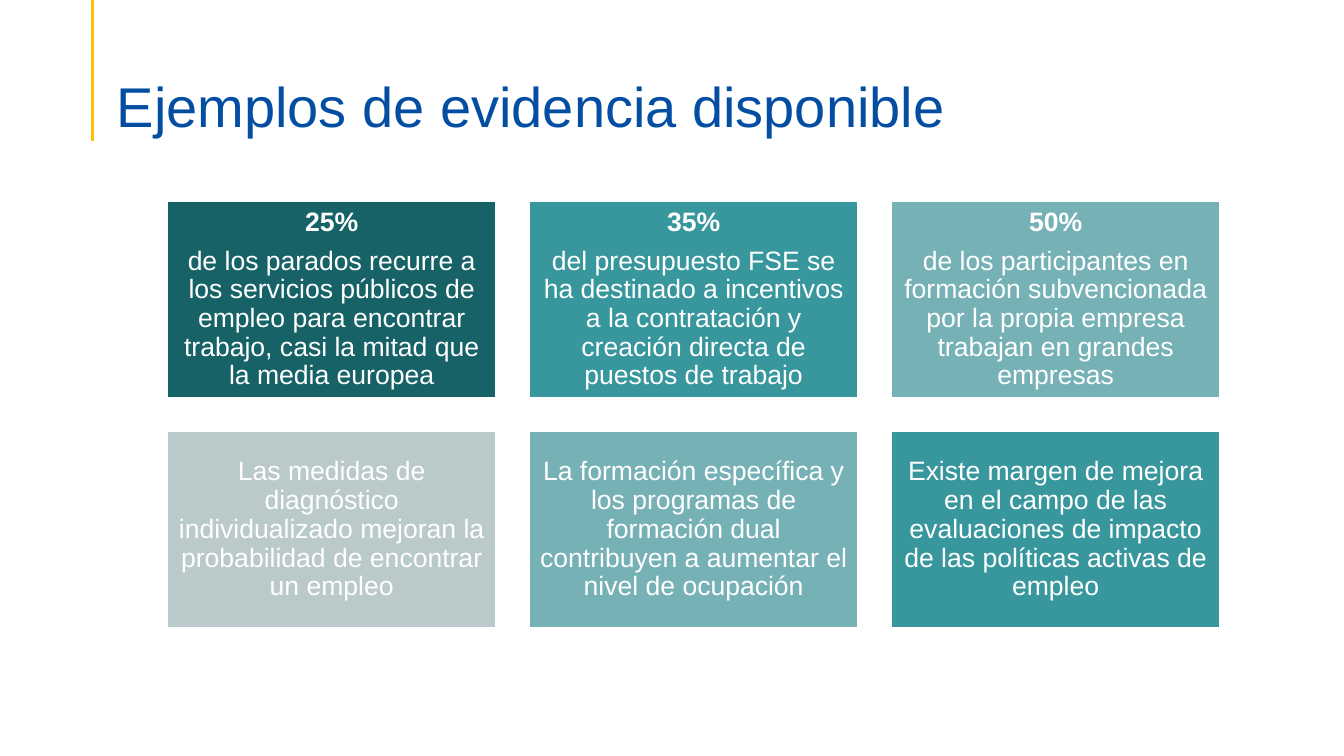
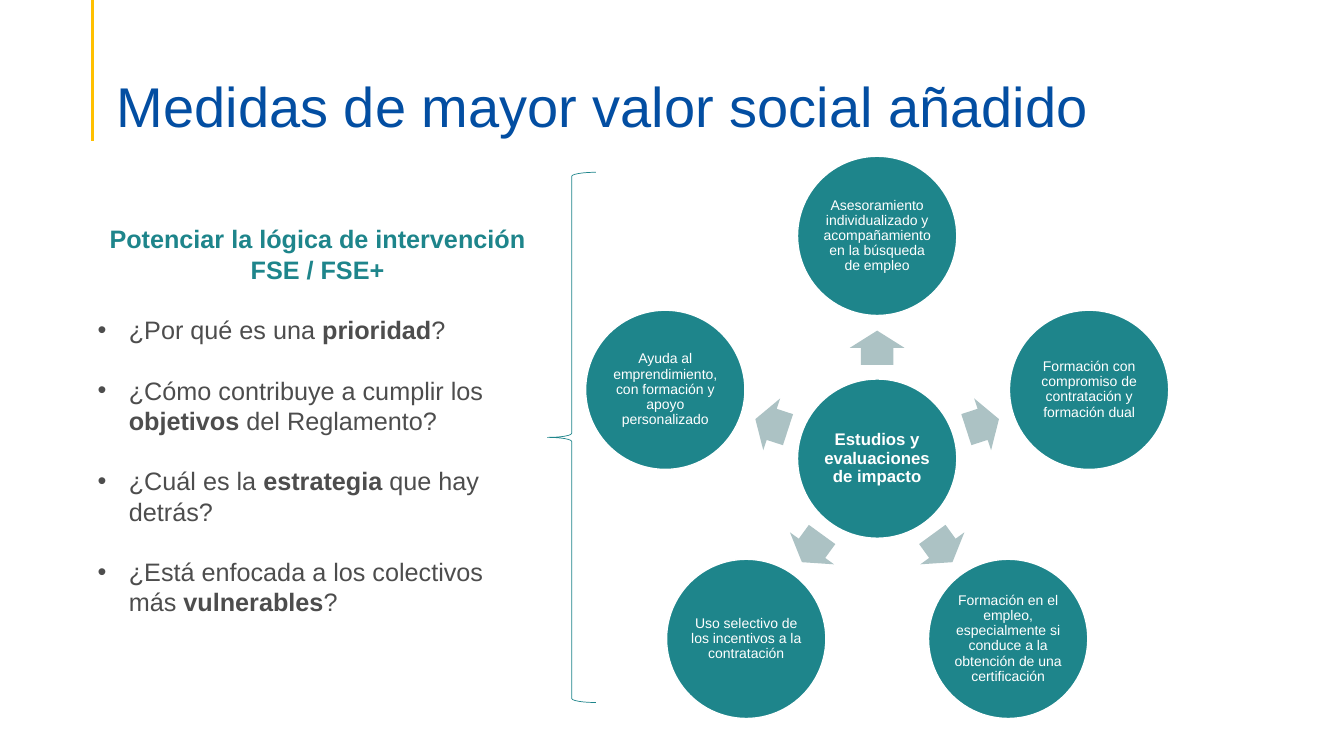
"""Build two slides on evidence and social value of employment measures."""
from dataclasses import dataclass
from math import cos, radians, sin

from lxml import etree
from pptx import Presentation
from pptx.dml.color import RGBColor
from pptx.enum.shapes import MSO_CONNECTOR as CONN, MSO_SHAPE as SHAPE
from pptx.enum.text import MSO_ANCHOR as ANCHOR, PP_ALIGN as ALIGN
from pptx.oxml.ns import qn
from pptx.util import Pt

PX = 9144


@dataclass(frozen=True)
class Theme:
    font: str = "Arial"
    title: str = "034EA2"
    rule: str = "FFC000"
    white: str = "FFFFFF"
    body: str = "4D4D4D"
    teal: str = "1E858B"
    arrow: str = "ACC2C4"
    deep: str = "166267"
    medium: str = "38969D"
    light: str = "76B1B6"
    pale: str = "BAC9CA"
    title_size: int = 40
    card_size: int = 19
    body_size: int = 18
    hub_size: int = 12
    node_size: int = 10


T = Theme()

CARDS_TITLE = "Ejemplos de evidencia disponible"
CARDS = [
    (T.deep, "25%", "de los parados recurre a los servicios públicos de empleo para "
     "encontrar trabajo, casi la mitad que la media europea"),
    (T.medium, "35%", "del presupuesto FSE se ha destinado a incentivos a la contratación "
     "y creación directa de puestos de trabajo"),
    (T.light, "50%", "de los participantes en formación subvencionada por la propia "
     "empresa trabajan en grandes empresas"),
    (T.pale, None, "Las medidas de diagnóstico individualizado mejoran la probabilidad "
     "de encontrar un empleo"),
    (T.light, None, "La formación específica y los programas de formación dual "
     "contribuyen a aumentar el nivel de ocupación"),
    (T.medium, None, "Existe margen de mejora en el campo de las evaluaciones de impacto "
     "de las políticas activas de empleo"),
]

WHEEL_TITLE = "Medidas de mayor valor social añadido"
HEADING = "Potenciar la lógica de intervención FSE / FSE+"
QUESTIONS = [
    ("¿Por qué es una ", "prioridad", "?"),
    ("¿Cómo contribuye a cumplir los ", "objetivos", " del Reglamento?"),
    ("¿Cuál es la ", "estrategia", " que hay detrás?"),
    ("¿Está enfocada a los colectivos más ", "vulnerables", "?"),
]
HUB = "Estudios y evaluaciones de impacto"
MEASURES = [
    "Asesoramiento individualizado y acompañamiento en la búsqueda de empleo",
    "Formación con compromiso de contratación y formación dual",
    "Formación en el empleo, especialmente si conduce a la obtención de una certificación",
    "Uso selectivo de los incentivos a la contratación",
    "Ayuda al emprendimiento, con formación y apoyo personalizado",
]


def px(*values):
    return [round(v * PX) for v in values]


def rgb(code):
    return RGBColor.from_string(code)


def add_run(p, text, size, color, bold=False):
    r = p.add_run()
    r.text = text
    r.font.name = T.font
    r.font.size = Pt(size)
    r.font.bold = bold
    r.font.color.rgb = rgb(color)


def set_frame(sp, anchor, insets):
    tf = sp.text_frame
    tf.word_wrap = True
    tf.vertical_anchor = anchor
    tf.margin_left, tf.margin_top, tf.margin_right, tf.margin_bottom = px(*insets)
    return tf


def next_paragraph(tf, first):
    return tf.paragraphs[0] if first else tf.add_paragraph()


def add_shape(slide, kind, box, fill=None, line=None, width=1):
    sp = slide.shapes.add_shape(kind, *px(*box))
    sp.shadow.inherit = False
    if fill:
        sp.fill.solid()
        sp.fill.fore_color.rgb = rgb(fill)
    else:
        sp.fill.background()
    if line:
        sp.line.color.rgb = rgb(line)
        sp.line.width = Pt(width)
    else:
        sp.line.fill.background()
    return sp


def centred_text(sp, paragraphs, size, inset):
    tf = set_frame(sp, ANCHOR.MIDDLE, [inset] * 4)
    for i, (text, bold) in enumerate(paragraphs):
        p = next_paragraph(tf, i == 0)
        p.alignment = ALIGN.CENTER
        p.line_spacing = 0.9
        p.space_after = Pt(round(size * 0.35, 2))
        add_run(p, text, size, T.white, bold)


def add_slide(prs, title):
    slide = prs.slides.add_slide(prs.slide_layouts[6])
    rule = slide.shapes.add_connector(CONN.STRAIGHT, *px(92, 0, 92, 140))
    rule.line.color.rgb = rgb(T.rule)
    rule.line.width = Pt(2.25)
    etree.SubElement(rule._element.spPr, qn("a:effectLst"))
    tf = set_frame(slide.shapes.add_textbox(*px(106, 53, 1150, 86)),
                   ANCHOR.BOTTOM, (10, 5, 10, 0))
    p = tf.paragraphs[0]
    p.line_spacing = 0.9
    add_run(p, title, T.title_size, T.title)
    return slide


def add_bullet(p, indent):
    ppr = p._p.get_or_add_pPr()
    ppr.set("marL", str(indent * PX))
    ppr.set("indent", str(-indent * PX))
    etree.SubElement(ppr, qn("a:buFont"), typeface=T.font)
    etree.SubElement(ppr, qn("a:buChar"), char="•")


def build_cards(prs):
    slide = add_slide(prs, CARDS_TITLE)
    left, top, width, height, gap, columns = 166, 200, 326, 195, 33, 3
    for i, (fill, figure, text) in enumerate(CARDS):
        row, col = divmod(i, columns)
        box = (left + col * (width + gap), top + row * (height + gap), width, height)
        sp = add_shape(slide, SHAPE.RECTANGLE, box, fill, T.white)
        lead = [(figure, True)] if figure else []
        centred_text(sp, lead + [(text, False)], T.card_size, 8)


def add_circle(slide, cx, cy, text, size, bold, inset):
    d = 158
    sp = add_shape(slide, SHAPE.OVAL, (cx - d / 2, cy - d / 2, d, d), T.teal, T.white)
    centred_text(sp, [(text, bold)], size, inset)


def add_wheel(slide):
    cx, cy, orbit, arrow_orbit = 870, 455, 221, 110
    arrow_w, arrow_h = 34, 54
    add_circle(slide, cx, cy, HUB, T.hub_size, True, 2)
    for i, text in enumerate(MEASURES):
        angle = (270 + i * 360 / len(MEASURES)) % 360
        ux, uy = cos(radians(angle)), sin(radians(angle))
        box = (cx + arrow_orbit * ux - arrow_w / 2,
               cy + arrow_orbit * uy - arrow_h / 2, arrow_w, arrow_h)
        arrow = add_shape(slide, SHAPE.RIGHT_ARROW, box, T.arrow)
        arrow.adjustments[0] = 0.6
        arrow.adjustments[1] = 0.5
        arrow.rotation = angle
        add_circle(slide, cx + orbit * ux, cy + orbit * uy, text, T.node_size, False, 1)


def add_questions(slide):
    sp = slide.shapes.add_textbox(*px(87, 217, 456, 434))
    tf = set_frame(sp, ANCHOR.TOP, (10, 5, 10, 5))
    p = tf.paragraphs[0]
    p.alignment = ALIGN.CENTER
    add_run(p, HEADING, T.body_size, T.teal, True)
    for question in QUESTIONS:
        p = tf.add_paragraph()
        p.space_before = Pt(21.6)
        add_bullet(p, 31)
        for i, text in enumerate(question):
            add_run(p, text, T.body_size, T.body, i == 1)


def build_wheel(prs):
    slide = add_slide(prs, WHEEL_TITLE)
    add_wheel(slide)
    add_questions(slide)
    add_shape(slide, SHAPE.LEFT_BRACE, (543, 171, 48, 526), line=T.teal, width=0.5)


def main():
    prs = Presentation()
    prs.slide_width, prs.slide_height = px(1333, 750)
    build_cards(prs)
    build_wheel(prs)
    prs.save("out.pptx")


if __name__ == "__main__":
    main()
